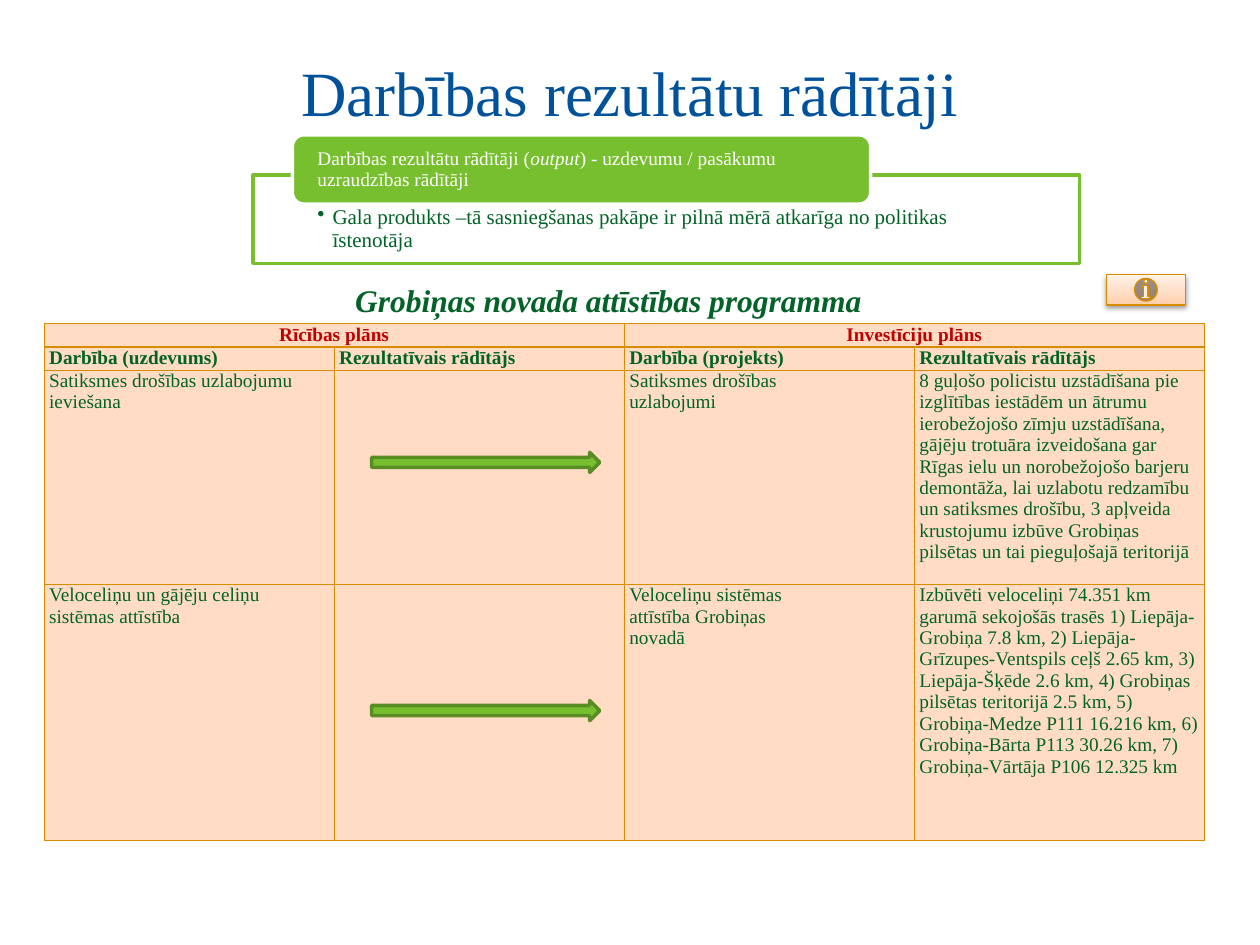
from lxml.etree import SubElement as Sub
from pptx import Presentation
from pptx.dml.color import RGBColor as Rgb
from pptx.enum.shapes import MSO_SHAPE as Kind
from pptx.enum.text import MSO_ANCHOR as Anchor, PP_ALIGN as Align
from pptx.oxml import parse_xml
from pptx.oxml.ns import nsdecls, qn
from pptx.util import Inches, Pt

THEME = {
    "font": "Times New Roman", "blue": "02529B", "green": "026227",
    "lime": "78BF30", "moss": "598D24", "gold": "D68E00", "red": "C00000",
    "peach": "FFDCC3", "white": "FFFFFF",
    "title": 36, "sub": 18, "point": 12, "body": 11,
    "glow": [(0, "FFCFAB"), (35, "FFDCC3"), (100, "FFF2E8")],
}
TITLE = "Darbības rezultātu rādītāji"
LABEL = [("Darbības rezultātu rādītāji (", False), ("output", True),
         (") - uzdevumu / pasākumu uzraudzības rādītāji", False)]
POINT = ("Gala produkts –tā sasniegšanas pakāpe ir pilnā mērā atkarīga "
         "no politikas īstenotāja")
SUB = "Grobiņas novada attīstības programma"
PLANS = ["Rīcības plāns", "Investīciju plāns"]
HEADS = ["Darbība (uzdevums)", "Rezultatīvais rādītājs",
         "Darbība (projekts)", "Rezultatīvais rādītājs"]
TASKS = [
    [["Satiksmes drošības uzlabojumu ieviešana"], [],
     ["Satiksmes drošības", "uzlabojumi"],
     ["8 guļošo policistu uzstādīšana pie izglītības iestādēm un ātrumu",
      "ierobežojošo zīmju uzstādīšana, gājēju trotuāra izveidošana gar Rīgas "
      "ielu un norobežojošo barjeru demontāža, lai uzlabotu redzamību un "
      "satiksmes drošību, 3 apļveida krustojumu izbūve Grobiņas pilsētas un "
      "tai pieguļošajā teritorijā"]],
    [["Veloceliņu un gājēju celiņu sistēmas attīstība"], [],
     ["Veloceliņu sistēmas", "attīstība Grobiņas", "novadā"],
     ["Izbūvēti veloceliņi 74.351 km garumā sekojošās trasēs 1) "
      "Liepāja-Grobiņa 7.8 km, 2) Liepāja- Grīzupes-Ventspils ceļš 2.65 km, "
      "3) Liepāja-Šķēde 2.6 km, 4) Grobiņas",
      "pilsētas teritorijā 2.5 km, 5)",
      "Grobiņa-Medze P111 16.216 km, 6) Grobiņa-Bārta P113 30.26 km, "
      "7) Grobiņa-Vārtāja P106 12.325 km"]],
]
GRID = (0.35, 2.57, 9.21)
ROWS = [0.18, 0.18, 1.7, 2.03]
ARROWS = [3.59, 5.56]


def tone(name):
    return Rgb.from_string(THEME.get(name, name))


def write(para, text, size, hue, bold=False, slant=False):
    run = para.add_run()
    run.text = text
    font = run.font
    font.name, font.size = THEME["font"], Pt(THEME[size])
    font.bold, font.italic = bold, slant
    font.color.rgb = tone(hue)


def frame(slide, box, pad=(0.1, 0.05, 0.1, 0.05), anchor=Anchor.TOP):
    text = slide.shapes.add_textbox(*map(Inches, box)).text_frame
    text.word_wrap = True
    text.vertical_anchor = anchor
    (text.margin_left, text.margin_top,
     text.margin_right, text.margin_bottom) = map(Inches, pad)
    return text.paragraphs[0]


def draw(slide, kind, box, fill, line, width=2):
    shape = slide.shapes.add_shape(kind, *map(Inches, box))
    shape.shadow.inherit = False
    shape.fill.solid()
    shape.fill.fore_color.rgb = tone(fill)
    shape.line.color.rgb = tone(line)
    shape.line.width = Pt(width)
    return shape


def style(cell):
    cell.margin_left = cell.margin_right = Inches(0.04)
    cell.margin_top = cell.margin_bottom = 0
    props = cell._tc.get_or_add_tcPr()
    for side in "LRTB":
        edge = Sub(props, qn(f"a:ln{side}"), w=str(Pt(0.75)))
        Sub(Sub(edge, qn("a:solidFill")), qn("a:srgbClr"), val=THEME["gold"])
    cell.fill.solid()
    cell.fill.fore_color.rgb = tone("peach")


def fill_cell(cell, lines, hue="green", bold=False, align=Align.LEFT):
    text = cell.text_frame
    for i, line in enumerate(lines):
        para = text.add_paragraph() if i else text.paragraphs[0]
        para.alignment = align
        write(para, line, "body", hue, bold)
    if not lines:
        text.paragraphs[0].font.size = Pt(THEME["body"])


def add_grid(slide):
    left, top, width = GRID
    box = map(Inches, (left, top, width, sum(ROWS)))
    table = slide.shapes.add_table(len(ROWS), len(HEADS), *box).table
    table.first_row = table.horz_banding = False
    for col in table.columns:
        col.width = Inches(width / len(HEADS))
    for row, high in zip(table.rows, ROWS):
        row.height = Inches(high)
    for cell in table.iter_cells():
        style(cell)
    for i, plan in enumerate(PLANS):
        cell = table.cell(0, 2 * i)
        cell.merge(table.cell(0, 2 * i + 1))
        fill_cell(cell, [plan], "red", True, Align.CENTER)
    for i, head in enumerate(HEADS):
        fill_cell(table.cell(1, i), [head], bold=True)
    for r, task in enumerate(TASKS, 2):
        for c, lines in enumerate(task):
            fill_cell(table.cell(r, c), lines)


def add_info(slide):
    shape = draw(slide, Kind.ACTION_BUTTON_INFORMATION,
                 (8.78, 2.18, 0.63, 0.24), "peach", "gold", 0.75)
    props = shape._element.spPr
    stops = "".join(f'<a:gs pos="{at * 1000}"><a:srgbClr val="{hue}"/></a:gs>'
                    for at, hue in THEME["glow"])
    props.replace(props.find(qn("a:solidFill")), parse_xml(
        f'<a:gradFill {nsdecls("a")} rotWithShape="1"><a:gsLst>{stops}</a:gsLst>'
        '<a:lin ang="16200000" scaled="0"/></a:gradFill>'))
    cast = Sub(props.find(qn("a:effectLst")), qn("a:outerShdw"),
               blurRad=str(Pt(3.1)), dist=str(Pt(1.6)), dir="5400000",
               rotWithShape="0")
    Sub(Sub(cast, qn("a:srgbClr"), val="000000"), qn("a:alpha"), val="38000")


def add_banner(slide):
    box = (2.01, 1.39, 6.56, 0.7)
    panel = draw(slide, Kind.RECTANGLE, box, "white", "lime")
    hue = panel._element.spPr.find(qn("a:solidFill")).find(qn("a:srgbClr"))
    Sub(hue, qn("a:alpha"), val="90000")
    para = frame(slide, box, (0.51, 0.25, 0.51, 0.09))
    props = para._p.get_or_add_pPr()
    props.set("marL", str(Inches(0.12)))
    props.set("indent", str(Inches(-0.12)))
    Sub(props, qn("a:buChar"), char="•")
    para.line_spacing = 0.9
    write(para, POINT, "point", "green")
    draw(slide, Kind.ROUNDED_RECTANGLE, (2.32, 1.07, 4.59, 0.55),
         "lime", "white")
    para = frame(slide, (2.35, 1.1, 4.54, 0.5), (0.17, 0, 0.17, 0),
                 Anchor.MIDDLE)
    para.line_spacing = 0.9
    for text, slant in LABEL:
        write(para, text, "body", "white", slant=slant)


def main():
    """Build the slide on result indicators and save it."""
    deck = Presentation()
    deck.slide_width, deck.slide_height = Inches(10), Inches(7.5)
    slide = deck.slides.add_slide(deck.slide_layouts[6])
    para = frame(slide, (0.5, 0.3, 9, 0.85), anchor=Anchor.MIDDLE)
    para.alignment = Align.CENTER
    write(para, TITLE, "title", "blue")
    add_banner(slide)
    add_grid(slide)
    para = frame(slide, (2.72, 2.18, 4.49, 0.4))
    write(para, SUB, "sub", "green", True, True)
    for top in ARROWS:
        draw(slide, Kind.RIGHT_ARROW, (2.95, top, 1.81, 0.16), "lime", "moss")
    add_info(slide)
    deck.save("out.pptx")


if __name__ == "__main__":
    main()
